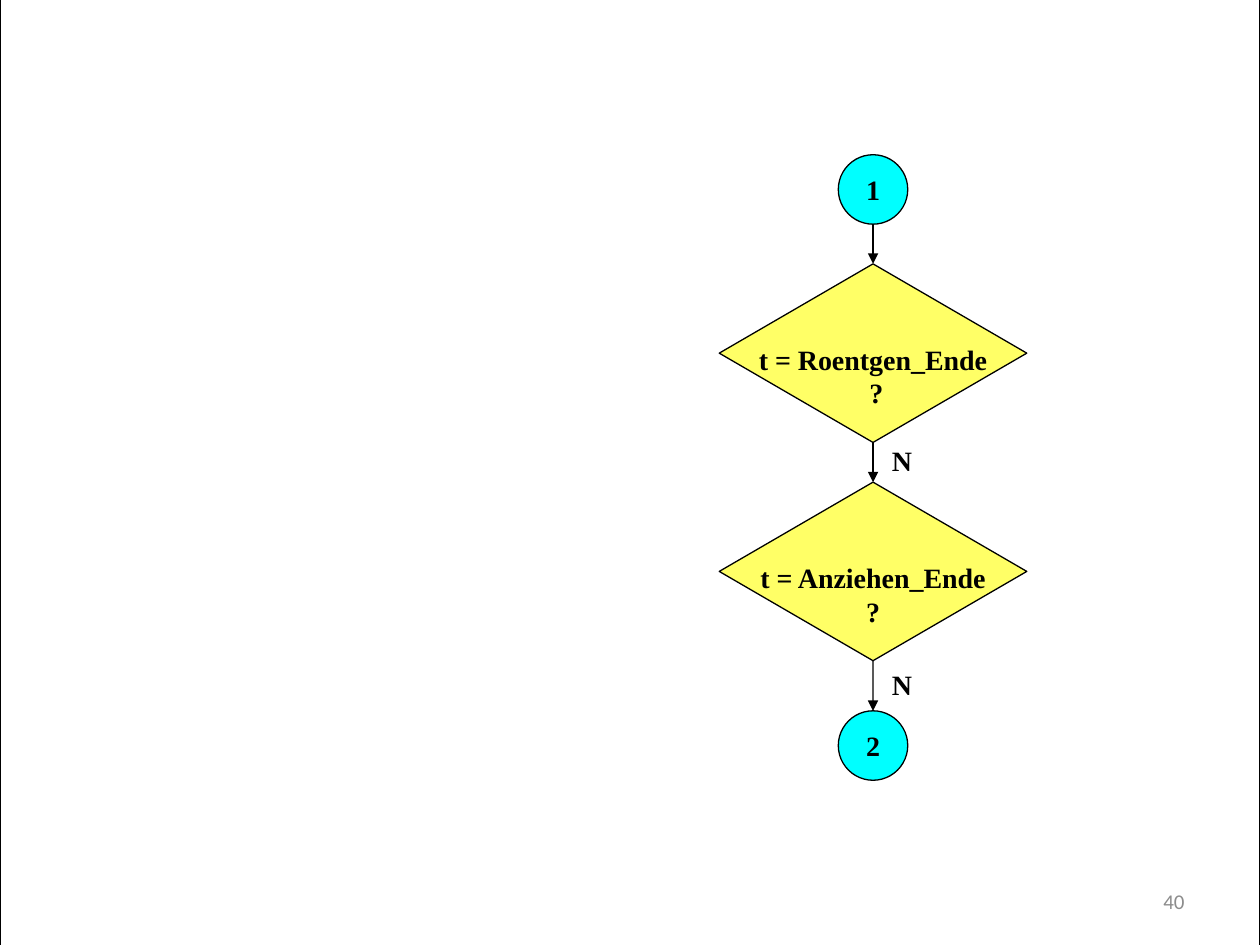
from dataclasses import dataclass

from lxml import etree
from pptx import Presentation
from pptx.dml.color import RGBColor
from pptx.enum.shapes import MSO_CONNECTOR, MSO_SHAPE
from pptx.enum.text import MSO_ANCHOR, PP_ALIGN
from pptx.oxml.ns import qn
from pptx.util import Cm, Pt

CIRCLE = MSO_SHAPE.OVAL
DECISION = MSO_SHAPE.FLOWCHART_DECISION
RECTANGLE = MSO_SHAPE.RECTANGLE
STRAIGHT = MSO_CONNECTOR.STRAIGHT
TOP, MIDDLE = MSO_ANCHOR.TOP, MSO_ANCHOR.MIDDLE
CENTER, RIGHT = PP_ALIGN.CENTER, PP_ALIGN.RIGHT

BLACK = RGBColor(0x00, 0x00, 0x00)
CYAN = RGBColor(0x00, 0xFF, 0xFF)
YELLOW = RGBColor(0xFF, 0xFF, 0x66)
GREY = RGBColor(0x8C, 0x8C, 0x8C)

LINE_WIDTH = Pt(0.75)
AXIS = 17.6  # centre line of the flow chart, cm
CHART_TOP = 3.12
LABEL_WIDTH, LABEL_HEIGHT = 1.27, 1.0
LABEL_OFFSET = -0.05
TOP_SITE, BOTTOM_SITE = 0, 2


@dataclass(frozen=True)
class Kind:
    preset: int
    fill: RGBColor
    width: float
    height: float


@dataclass(frozen=True)
class Node:
    kind: Kind
    lines: tuple[str, ...]
    gap: float = 0.0  # distance to the next node, cm
    exit_label: str = ""


CONNECTOR_POINT = Kind(CIRCLE, CYAN, 1.4, 1.4)
QUESTION = Kind(DECISION, YELLOW, 6.2, 3.6)

NODES = (
    Node(CONNECTOR_POINT, ("1",), 0.8),
    Node(QUESTION, ("t = Roentgen_Ende", " ?"), 0.8, "N"),
    Node(QUESTION, ("t = Anziehen_Ende", "?"), 1.01, "N"),
    Node(CONNECTOR_POINT, ("2",)),
)


def write_lines(frame, lines: tuple[str, ...], alignment=CENTER, size: int = 16,
                font: str = "Times New Roman", color: RGBColor = BLACK,
                bold: bool = True) -> None:
    for index, line in enumerate(lines):
        paragraph = frame.add_paragraph() if index else frame.paragraphs[0]
        paragraph.alignment = alignment
        run = paragraph.add_run()
        run.text = line
        run.font.name = font
        run.font.size = Pt(size)
        run.font.bold = bold
        run.font.color.rgb = color


def add_outlined_shape(slide, preset, left: float, top: float,
                       width: float, height: float):
    shape = slide.shapes.add_shape(preset, Cm(left), Cm(top), Cm(width), Cm(height))
    shape.shadow.inherit = False
    shape.line.color.rgb = BLACK
    shape.line.width = LINE_WIDTH
    return shape


def add_node(slide, node: Node, top: float):
    kind = node.kind
    shape = add_outlined_shape(slide, kind.preset, AXIS - kind.width / 2, top,
                               kind.width, kind.height)
    shape.fill.solid()
    shape.fill.fore_color.rgb = kind.fill
    frame = shape.text_frame
    frame.vertical_anchor = MIDDLE
    if kind is QUESTION:
        frame.vertical_anchor = TOP
        frame.word_wrap = False
        frame.margin_left = frame.margin_right = frame.margin_bottom = 0
        frame.margin_top = Cm(0.68)
    write_lines(frame, node.lines)
    return shape


def add_arrow(slide, source, target, source_kind: Kind) -> None:
    x = Cm(AXIS)
    arrow = slide.shapes.add_connector(STRAIGHT, x, source.top + source.height,
                                       x, target.top)
    if source_kind is QUESTION:
        arrow.begin_connect(source, BOTTOM_SITE)
    arrow.end_connect(target, TOP_SITE)
    arrow.line.color.rgb = BLACK
    arrow.line.width = LINE_WIDTH
    etree.SubElement(arrow.line._get_or_add_ln(), qn("a:tailEnd"), type="triangle")
    etree.SubElement(arrow._element.spPr, qn("a:effectLst"))


def add_text_box(slide, left: float, top: float, width: float, height: float):
    box = slide.shapes.add_textbox(Cm(left), Cm(top), Cm(width), Cm(height))
    box.text_frame.word_wrap = True
    return box.text_frame


def add_flow_chart(slide) -> None:
    top = CHART_TOP
    previous_node, previous_shape = None, None
    for node in NODES:
        shape = add_node(slide, node, top)
        if previous_node:
            add_arrow(slide, previous_shape, shape, previous_node.kind)
        bottom = top + node.kind.height
        if node.exit_label:
            label_top = bottom + (node.gap - LABEL_HEIGHT) / 2
            frame = add_text_box(slide, AXIS + LABEL_OFFSET, label_top,
                                 LABEL_WIDTH, LABEL_HEIGHT)
            write_lines(frame, (node.exit_label,))
        previous_node, previous_shape = node, shape
        top = bottom + node.gap


def main() -> None:
    presentation = Presentation()
    presentation.slide_width = Cm(25.4)
    presentation.slide_height = Cm(19.05)
    slide = presentation.slides.add_slide(presentation.slide_layouts[6])

    # Slide frame
    border = add_outlined_shape(slide, RECTANGLE, 0, -0.03, 25.4, 19.1)
    border.fill.background()

    # Flow chart
    add_flow_chart(slide)

    # Slide number
    frame = add_text_box(slide, 18.2, 17.66, 5.93, 1.01)
    frame.vertical_anchor = MIDDLE
    write_lines(frame, ("40",), RIGHT, 12, "Calibri", GREY, False)

    presentation.save("out.pptx")


if __name__ == "__main__":
    main()
